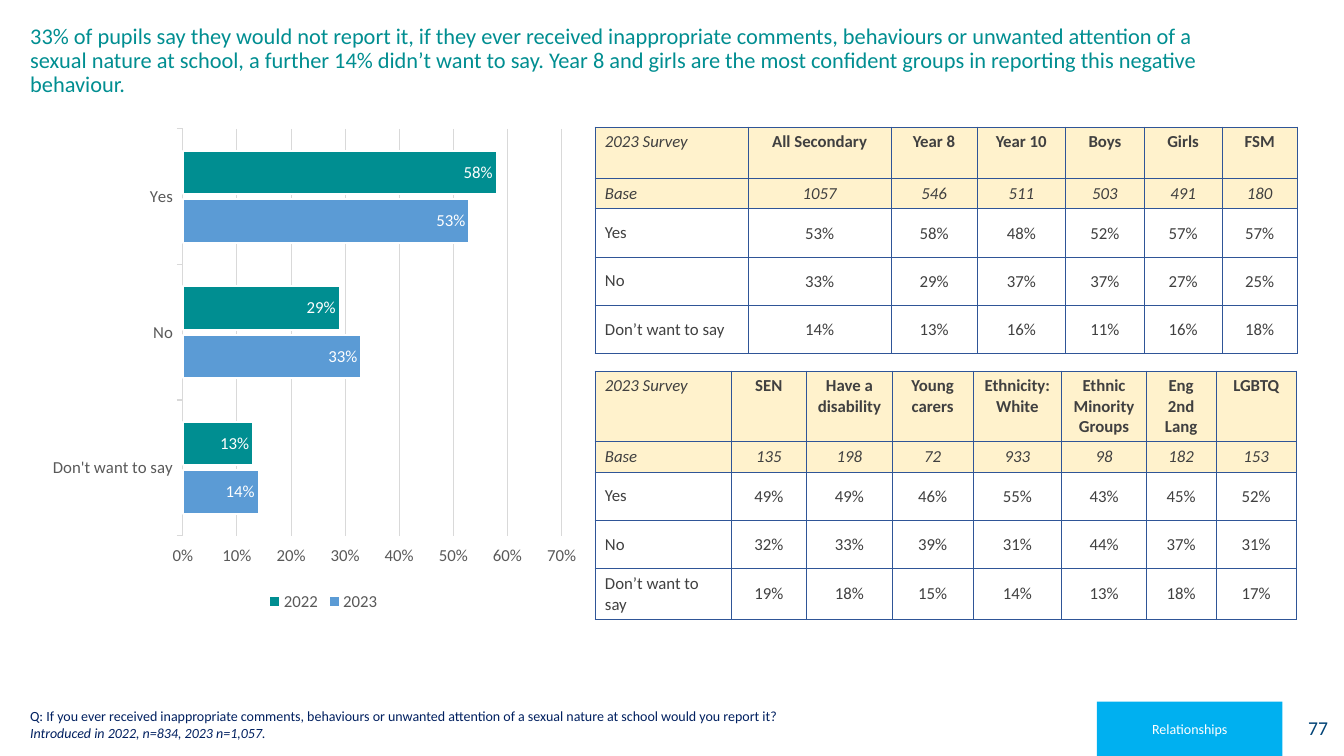
from lxml.etree import SubElement
from pptx import Presentation
from pptx.chart.data import CategoryChartData
from pptx.dml.color import RGBColor
from pptx.enum.chart import XL_CHART_TYPE as ChartType, XL_LABEL_POSITION as LabelPosition
from pptx.enum.chart import XL_LEGEND_POSITION as LegendPosition, XL_TICK_MARK as TickMark
from pptx.enum.shapes import MSO_SHAPE as Preset
from pptx.enum.text import MSO_ANCHOR as Anchor, MSO_AUTO_SIZE as AutoSize, PP_ALIGN as Align
from pptx.oxml import parse_xml
from pptx.oxml.ns import nsdecls, qn
from pptx.util import Inches, Pt

COLORS = {
    "teal": "008E91", "blue": "5B9BD5", "navy": "002060", "number": "004376",
    "tag": "00B0F0", "cream": "FFF2CC", "border": "2F5597", "text": "404040",
    "axis": "595959", "grid": "D9D9D9", "white": "FFFFFF",
}
TITLE = (
    "33% of pupils say they would not report it, if they ever received inappropriate "
    "comments, behaviours or unwanted attention of a sexual nature at school, a further "
    "14% didn’t want to say. Year 8 and girls are the most confident groups in reporting "
    "this negative behaviour."
)
QUESTION = (
    "Q: If you ever received inappropriate comments, behaviours or unwanted attention "
    "of a sexual nature at school would you report it?"
)
SAMPLE = "Introduced in 2022, n=834, 2023 n=1,057."

CATEGORIES = ["Don't want to say", "No", "Yes"]
SERIES = [
    ("2023", (0.14, 0.33, 0.53), "blue"),
    ("2022", (0.13, 0.29, 0.58), "teal"),
]
PLOT_AREA = {"x": 0.268, "y": 0.071, "w": 0.624, "h": 0.776}

ROW_LABELS = ["2023 Survey", "Base", "Yes", "No", "Don’t want to say"]
ROW_HEIGHTS = [0.51, 0.27, 0.48, 0.48, 0.48]
# Each table: top, label column width, then (heading, width, base, yes, no, not said)
TABLES = [
    (1.26, 1.52, [
        ("All Secondary", 1.42, 1057, 53, 33, 14),
        ("Year 8", 0.85, 546, 58, 29, 13),
        ("Year 10", 0.88, 511, 48, 37, 16),
        ("Boys", 0.78, 503, 52, 37, 11),
        ("Girls", 0.77, 491, 57, 27, 16),
        ("FSM", 0.75, 180, 57, 25, 18),
    ]),
    (3.68, 1.35, [
        ("SEN", 0.75, 135, 49, 32, 19),
        ("Have a disability", 0.85, 198, 49, 33, 18),
        ("Young carers", 0.8, 72, 46, 39, 15),
        ("Ethnicity: White", 0.88, 933, 55, 31, 14),
        ("Ethnic Minority Groups", 0.84, 98, 43, 44, 13),
        ("Eng 2nd Lang", 0.69, 182, 45, 37, 18),
        ("LGBTQ", 0.8, 153, 52, 31, 17),
    ]),
]


def rgb(name):
    return RGBColor.from_string(COLORS[name])


def set_all(target, values):
    for name, value in values.items():
        setattr(target, name, value)


def set_font(font, size, color, bold=False, italic=False):
    set_all(font, {"name": "Calibri", "size": Pt(size), "bold": bold, "italic": italic})
    font.color.rgb = rgb(color)


def write(paragraph, text, size, color, align=Align.LEFT, **style):
    paragraph.alignment = align
    run = paragraph.add_run()
    run.text = text
    set_font(run.font, size, color, **style)


def place(shape, left, top, width, height):
    set_all(shape, {"left": Inches(left), "top": Inches(top),
                    "width": Inches(width), "height": Inches(height)})


def add_title(slide):
    title = slide.shapes.title
    place(title, 0.2, 0.2, 11.91, 0.98)
    set_all(title.text_frame, {"word_wrap": True, "auto_size": AutoSize.NONE,
                               "vertical_anchor": Anchor.TOP})
    paragraph = title.text_frame.paragraphs[0]
    paragraph.line_spacing = 0.9
    write(paragraph, TITLE, 16, "teal")


def add_block(slide, box, fill, text, size, color, align):
    block = slide.shapes.add_shape(Preset.RECTANGLE, *map(Inches, box))
    block.shadow.inherit = False
    block.fill.solid()
    block.fill.fore_color.rgb = rgb(fill)
    block.line.fill.background()
    block.text_frame.vertical_anchor = Anchor.MIDDLE
    write(block.text_frame.paragraphs[0], text, size, color, align)


def add_question(slide):
    box = slide.shapes.add_textbox(*map(Inches, (0.2, 6.96, 11.19, 0.44)))
    frame = box.text_frame
    set_all(frame, {"word_wrap": True, "vertical_anchor": Anchor.BOTTOM})
    write(frame.paragraphs[0], QUESTION, 10, "navy")
    write(frame.add_paragraph(), SAMPLE, 10, "navy", italic=True)


def set_line(line, color, width):
    line.color.rgb = rgb(color)
    line.width = Pt(width)


def fix_plot_area(chart):
    """Pin the inner plot area to fractions of the chart frame."""
    plot_area = chart._chartSpace.chart.plotArea
    for old in plot_area.findall(qn("c:layout")):
        plot_area.remove(old)
    layout = parse_xml(f"<c:layout {nsdecls('c')}><c:manualLayout/></c:layout>")
    values = {"layoutTarget": "inner", "xMode": "edge", "yMode": "edge", **PLOT_AREA}
    for tag, value in values.items():
        SubElement(layout[0], qn(f"c:{tag}"), val=str(value))
    plot_area.insert(0, layout)


def add_bar_chart(slide):
    data = CategoryChartData(number_format="0%")
    data.categories = CATEGORIES
    for name, values, _ in SERIES:
        data.add_series(name, values)
    box = map(Inches, (0.2, 0.91, 6.02, 5.2))
    chart = slide.shapes.add_chart(ChartType.BAR_CLUSTERED, *box, data).chart
    chart.has_title = False
    set_font(chart.font, 12, "axis")
    fix_plot_area(chart)

    chart.has_legend = True
    set_all(chart.legend, {"position": LegendPosition.BOTTOM, "include_in_layout": False})
    set_font(chart.legend.font, 12, "axis")

    for axis in (chart.category_axis, chart.value_axis):
        axis.major_tick_mark = TickMark.OUTSIDE
        set_font(axis.tick_labels.font, 12, "axis")
    set_line(chart.category_axis.format.line, "grid", 0.75)
    set_all(chart.value_axis, {"minimum_scale": 0, "maximum_scale": 0.7, "major_unit": 0.1})
    set_all(chart.value_axis.tick_labels,
            {"number_format": "0%", "number_format_is_linked": False})
    chart.value_axis.format.line.fill.background()
    set_line(chart.value_axis.major_gridlines.format.line, "grid", 0.75)

    plot = chart.plots[0]
    set_all(plot, {"gap_width": 100, "overlap": -12, "vary_by_categories": False})
    for series, (_, _, color) in zip(plot.series, SERIES):
        series.format.fill.solid()
        series.format.fill.fore_color.rgb = rgb(color)
        set_line(series.format.line, "white", 1.5)
        labels = series.data_labels
        set_all(labels, {"show_value": True, "position": LabelPosition.INSIDE_END,
                         "number_format": "0%", "number_format_is_linked": False})
        set_font(labels.font, 12, "white")


def add_borders(cell):
    properties = cell._tc.get_or_add_tcPr()
    for side in "LRTB":
        properties.append(parse_xml(
            f'<a:ln{side} {nsdecls("a")} w="{Pt(0.5)}"><a:solidFill>'
            f'<a:srgbClr val="{COLORS["border"]}"/></a:solidFill></a:ln{side}>'))


def format_cell(cell, row, column, text):
    is_heading, is_base, is_label = row == 0, row == 1, column == 0
    add_borders(cell)
    if is_heading or is_base:
        cell.fill.solid()
        cell.fill.fore_color.rgb = rgb("cream")
    else:
        cell.fill.background()
        if not is_label:
            set_all(cell, {"margin_left": Inches(0.01), "margin_right": Inches(0.01),
                           "margin_top": Inches(0.01), "margin_bottom": 0})
    cell.vertical_anchor = Anchor.TOP if is_heading else Anchor.MIDDLE
    write(cell.text_frame.paragraphs[0], text, 12, "text",
          Align.LEFT if is_label else Align.CENTER,
          bold=is_heading and not is_label,
          italic=is_base or (is_heading and is_label))


def add_survey_table(slide, top, label_width, groups):
    columns = [ROW_LABELS] + [
        [heading, str(base)] + [f"{share}%" for share in shares]
        for heading, _, base, *shares in groups
    ]
    widths = [label_width] + [group[1] for group in groups]
    table = slide.shapes.add_table(
        len(ROW_LABELS), len(columns), Inches(5.9), Inches(top),
        Inches(sum(widths)), Inches(sum(ROW_HEIGHTS))).table
    for row, height in zip(table.rows, ROW_HEIGHTS):
        row.height = Inches(height)
    for column, (width, texts) in enumerate(zip(widths, columns)):
        table.columns[column].width = Inches(width)
        for row, text in enumerate(texts):
            format_cell(table.cell(row, column), row, column, text)


def main():
    presentation = Presentation()
    set_all(presentation, {"slide_width": Inches(13.33), "slide_height": Inches(7.5)})
    slide = presentation.slides.add_slide(presentation.slide_layouts[5])
    add_block(slide, (12.68, 6.95, 0.59, 0.54), "white", "77", 14, "number", Align.RIGHT)
    add_question(slide)
    add_title(slide)
    add_block(slide, (10.88, 6.96, 1.84, 0.54), "tag", "Relationships", 10, "white", Align.CENTER)
    for survey in TABLES:
        add_survey_table(slide, *survey)
    add_bar_chart(slide)
    presentation.save("out.pptx")


if __name__ == "__main__":
    main()
